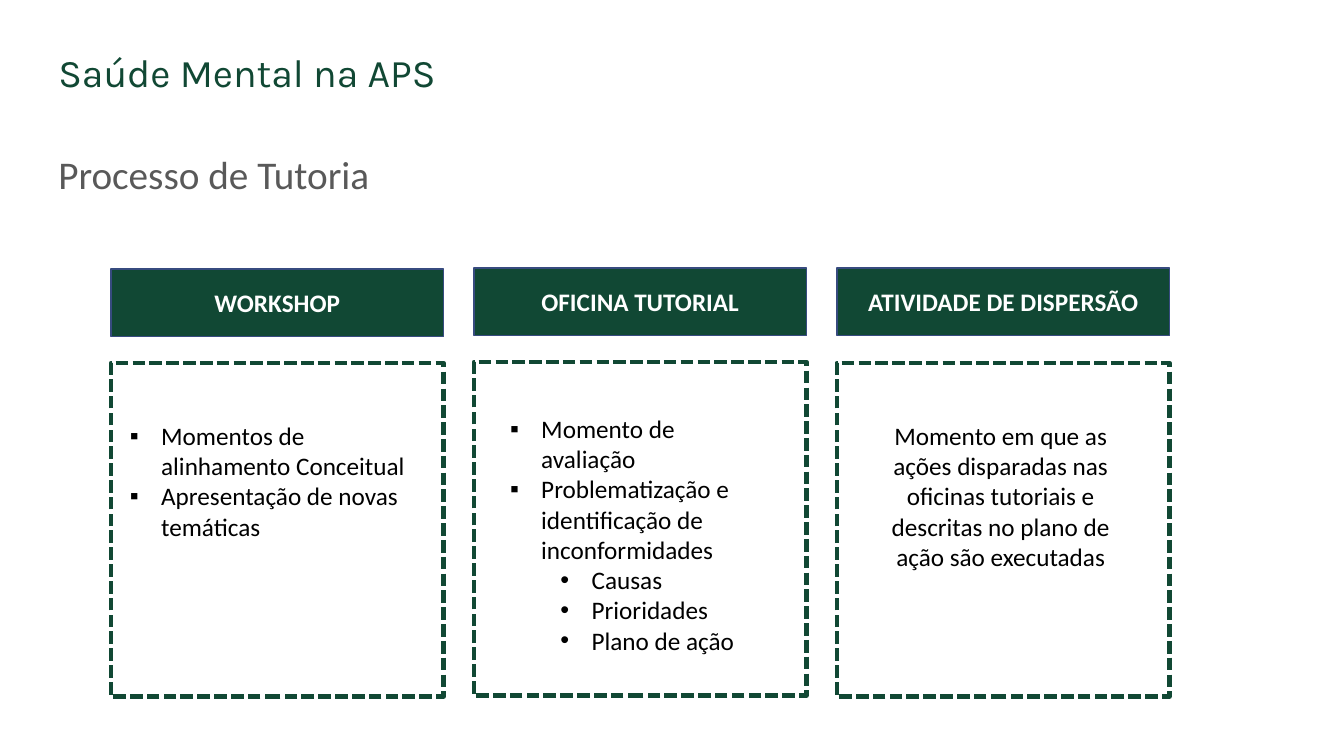
"""Builds the slide on the three stages of the tutoring process."""
from lxml.etree import SubElement
from pptx import Presentation
from pptx.dml.color import RGBColor
from pptx.enum.dml import MSO_LINE
from pptx.enum.shapes import MSO_SHAPE
from pptx.enum.text import MSO_ANCHOR, PP_ALIGN
from pptx.oxml.ns import qn
from pptx.util import Pt

PX = 9144
GREEN = RGBColor(0x11, 0x48, 0x34)
BLUE = RGBColor(0x37, 0x4B, 0x7F)
GRAY = RGBColor(0x59, 0x59, 0x59)
BLACK = RGBColor(0, 0, 0)
WHITE = RGBColor(255, 255, 255)
COLUMN_LEFT, COLUMN_STEP, COLUMN_WIDTH = 110, 360, 330
HEADER_HEIGHT, FRAME_HEIGHT = 67, 331
HANGING = 31

deck = Presentation()
deck.slide_width, deck.slide_height = 1333 * PX, 750 * PX
page = deck.slides.add_slide(deck.slide_layouts[6])


def add_text(box, lines, size, color, font="Calibri", bold=False,
             align=PP_ALIGN.LEFT, anchor=MSO_ANCHOR.TOP):
    """Writes (text, bullet, indent) lines into a box."""
    frame = box.text_frame
    frame.word_wrap = True
    frame.vertical_anchor = anchor
    for number, (text, bullet, indent) in enumerate(lines):
        para = frame.add_paragraph() if number else frame.paragraphs[0]
        para.alignment = align
        if bullet:
            para.level = 1 if indent > HANGING else 0
            properties = para._p.get_or_add_pPr()
            properties.set("marL", str(indent * PX))
            properties.set("indent", str(-HANGING * PX))
            SubElement(properties, qn("a:buFont")).set("typeface", "Arial")
            SubElement(properties, qn("a:buChar")).set("char", bullet)
        span = para.add_run()
        span.text = text
        span.font.name = font
        span.font.size = Pt(size)
        span.font.bold = bold
        span.font.color.rgb = color


def add_rectangle(left, top, height, line_color, line_width):
    """Adds a column-wide rectangle without shadow."""
    box = page.shapes.add_shape(MSO_SHAPE.RECTANGLE, left * PX, top * PX,
                                COLUMN_WIDTH * PX, height * PX)
    box.shadow.inherit = False
    box.fill.background()
    box.line.color.rgb = line_color
    box.line.width = Pt(line_width)
    return box


heading = page.shapes.add_textbox(48 * PX, 43 * PX, 708 * PX, 57 * PX)
add_text(heading, [("Saúde Mental na APS", None, 0)], 28, GREEN, "Karla")
title = page.shapes.add_textbox(48 * PX, 103 * PX, 1099 * PX, 145 * PX)
add_text(title, [("Processo de Tutoria", None, 0)], 28, GRAY, anchor=MSO_ANCHOR.MIDDLE)
title.text_frame.paragraphs[0].line_spacing = 0.9

stages = [
    ("WORKSHOP", 267, 360, (119, 412, 312, 131), PP_ALIGN.LEFT, [
        ("Momentos de alinhamento Conceitual", "▪", 31),
        ("Apresentação de novas temáticas", "▪", 31),
    ]),
    ("OFICINA TUTORIAL", 266, 359, (496, 405, 255, 283), PP_ALIGN.LEFT, [
        ("Momento de avaliação", "▪", 31),
        ("Problematização e identificação de inconformidades", "▪", 31),
        ("Causas", "•", 81),
        ("Prioridades", "•", 81),
        ("Plano de ação", "•", 81),
    ]),
    ("ATIVIDADE DE DISPERSÃO", 266, 360, (866, 412, 253, 192), PP_ALIGN.CENTER, [
        ("Momento em que as ações disparadas nas oficinas tutoriais e "
         "descritas no plano de ação são executadas", None, 0),
    ]),
]

for column, (name, header_top, frame_top, place, align, lines) in enumerate(stages):
    left = COLUMN_LEFT + column * COLUMN_STEP
    header = add_rectangle(left, header_top, HEADER_HEIGHT, BLUE, 1)
    header.fill.solid()
    header.fill.fore_color.rgb = GREEN
    add_text(header, [(name, None, 0)], 18, WHITE, bold=True,
             align=PP_ALIGN.CENTER, anchor=MSO_ANCHOR.MIDDLE)
    border = add_rectangle(left, frame_top, FRAME_HEIGHT, GREEN, 3)
    border.line.dash_style = MSO_LINE.SQUARE_DOT
    description = page.shapes.add_textbox(*(length * PX for length in place))
    add_text(description, lines, 18, BLACK, align=align)

deck.save("out.pptx")
